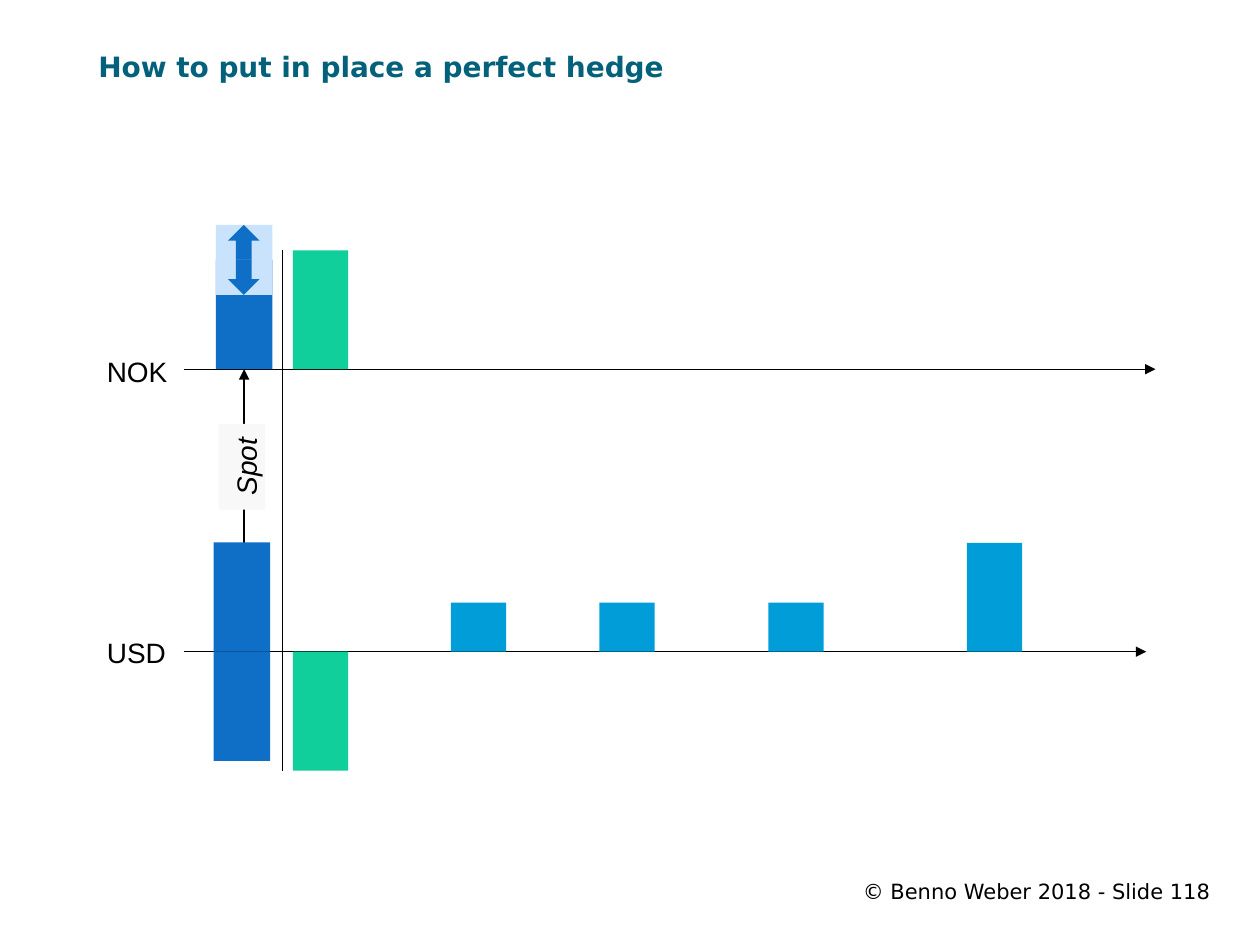
from dataclasses import dataclass

from lxml.etree import SubElement
from pptx import Presentation
from pptx.dml.color import RGBColor
from pptx.enum.shapes import MSO_CONNECTOR, MSO_SHAPE
from pptx.enum.text import MSO_ANCHOR, PP_ALIGN
from pptx.oxml.ns import qn
from pptx.util import Pt

BLACK = RGBColor(0x00, 0x00, 0x00)
TEAL = RGBColor(0x04, 0x61, 0x7B)
GREEN = RGBColor(0x10, 0xCF, 0x9B)
BLUE = RGBColor(0x0F, 0x6F, 0xC6)
PALE_BLUE = RGBColor(0xC8, 0xE3, 0xFB)
CYAN = RGBColor(0x00, 0x9D, 0xD9)
PALE_GREY = RGBColor(0xF8, 0xF8, 0xF8)

NOK_AXIS = 211
USD_AXIS = 372.4
SPOT_CENTER = 139.5
SWING_MIDDLE = 148.5
SWING_HEIGHT = 20
HEDGE_LEFT, HEDGE_HEIGHT = 167.3, 68
BAR_WIDTH, SPOT_WIDTH = 31.6, 32.4


@dataclass(frozen=True)
class Block:
    left: float
    top: float
    width: float
    height: float
    color: RGBColor
    preset: MSO_SHAPE = MSO_SHAPE.RECTANGLE


@dataclass(frozen=True)
class Line:
    start: tuple[float, float]
    end: tuple[float, float]
    arrow: bool = True


@dataclass(frozen=True)
class Label:
    text: str
    left: float
    top: float
    width: float
    height: float
    size: float
    font: str
    align: PP_ALIGN = PP_ALIGN.LEFT
    margin: float = 5.76
    wrap: bool = True


def rising_bar(left: float, axis: float, width: float, height: float, color: RGBColor) -> Block:
    return Block(left, axis - height, width, height, color)


def swing_half(top: float, arrow: MSO_SHAPE) -> list[Block]:
    return [
        Block(123.3, top, SPOT_WIDTH, SWING_HEIGHT, PALE_BLUE),
        Block(130.3, top, 18, SWING_HEIGHT, BLUE, arrow),
    ]


LINES = [
    Line((SPOT_CENTER, USD_AXIS), (SPOT_CENTER, NOK_AXIS)),
    Line((105, NOK_AXIS), (660.3, NOK_AXIS)),
    Line((105, USD_AXIS), (655, USD_AXIS)),
    Line((161.4, 143), (161.4, 440.5), arrow=False),
]

BLOCKS = [
    rising_bar(HEDGE_LEFT, NOK_AXIS, BAR_WIDTH, HEDGE_HEIGHT, GREEN),
    rising_bar(123.3, NOK_AXIS, SPOT_WIDTH, 62.5, BLUE),
    *(rising_bar(left, USD_AXIS, BAR_WIDTH, 28, CYAN) for left in (257.7, 342.5, 439)),
    rising_bar(552.5, USD_AXIS, BAR_WIDTH, 62.2, CYAN),
    Block(HEDGE_LEFT, USD_AXIS, BAR_WIDTH, HEDGE_HEIGHT, GREEN),
    rising_bar(122, USD_AXIS, SPOT_WIDTH, 62.4, BLUE),
    Block(122, USD_AXIS, SPOT_WIDTH, 62.4, BLUE),
    *swing_half(SWING_MIDDLE - SWING_HEIGHT, MSO_SHAPE.UP_ARROW),
    *swing_half(SWING_MIDDLE, MSO_SHAPE.DOWN_ARROW),
]

LABELS = [
    Label("© Benno Weber 2018 - Slide 118", 392.4, 496, 305, 26, 12, "DejaVu Sans", PP_ALIGN.RIGHT),
    Label("NOK", 54, 196.8, 49.6, 26.6, 16, "Arial", margin=7.2, wrap=False),
    Label("USD", 54, 357.4, 48.4, 26.6, 16, "Arial", margin=7.2, wrap=False),
]


def write_text(shape, text: str, size: float, font: str, color: RGBColor, align: PP_ALIGN, margin: float):
    frame = shape.text_frame
    frame.margin_left = frame.margin_right = Pt(margin)
    frame.margin_top = frame.margin_bottom = Pt(min(margin, 5.76))
    frame.vertical_anchor = MSO_ANCHOR.TOP
    frame.text = text
    para = frame.paragraphs[0]
    para.alignment = align
    para.font.size = Pt(size)
    para.font.name = font
    para.font.color.rgb = color
    return para


def draw_label(page, label: Label) -> None:
    box = page.shapes.add_textbox(Pt(label.left), Pt(label.top), Pt(label.width), Pt(label.height))
    box.text_frame.word_wrap = label.wrap
    write_text(box, label.text, label.size, label.font, BLACK, label.align, label.margin)


def draw_line(page, line: Line) -> None:
    ends = [Pt(value) for value in (*line.start, *line.end)]
    connector = page.shapes.add_connector(MSO_CONNECTOR.STRAIGHT, *ends)
    connector.line.color.rgb = BLACK
    connector.line.width = Pt(0.75)
    if line.arrow:
        SubElement(connector.line._get_or_add_ln(), qn("a:tailEnd"), type="triangle")
    SubElement(connector._element.spPr, qn("a:effectLst"))


def draw_block(page, block: Block):
    shape = page.shapes.add_shape(
        block.preset, Pt(block.left), Pt(block.top), Pt(block.width), Pt(block.height)
    )
    shape.shadow.inherit = False
    shape.fill.solid()
    shape.fill.fore_color.rgb = block.color
    shape.line.fill.background()
    return shape


def draw_title(page) -> None:
    title = page.shapes.title
    title.left, title.top, title.width, title.height = Pt(50.4), Pt(22.3), Pt(643), Pt(33)
    para = write_text(
        title, "How to put in place a perfect hedge", 16, "DejaVu Sans", TEAL, PP_ALIGN.LEFT, 5.76
    )
    para.font.bold = True


def draw_spot_tag(page) -> None:
    tag = draw_block(page, Block(113.8, 253.4, 49, 26.6, PALE_GREY))
    tag.rotation = 270
    para = write_text(tag, "Spot", 16, "Arial", BLACK, PP_ALIGN.CENTER, 7.2)
    para.font.italic = True


def main() -> None:
    deck = Presentation()
    deck.slide_width, deck.slide_height = Pt(720), Pt(540)
    page = deck.slides.add_slide(deck.slide_layouts[5])
    draw_title(page)
    for line in LINES:
        draw_line(page, line)
    for label in LABELS:
        draw_label(page, label)
    for block in BLOCKS:
        draw_block(page, block)
    draw_spot_tag(page)
    deck.save("out.pptx")


if __name__ == "__main__":
    main()
